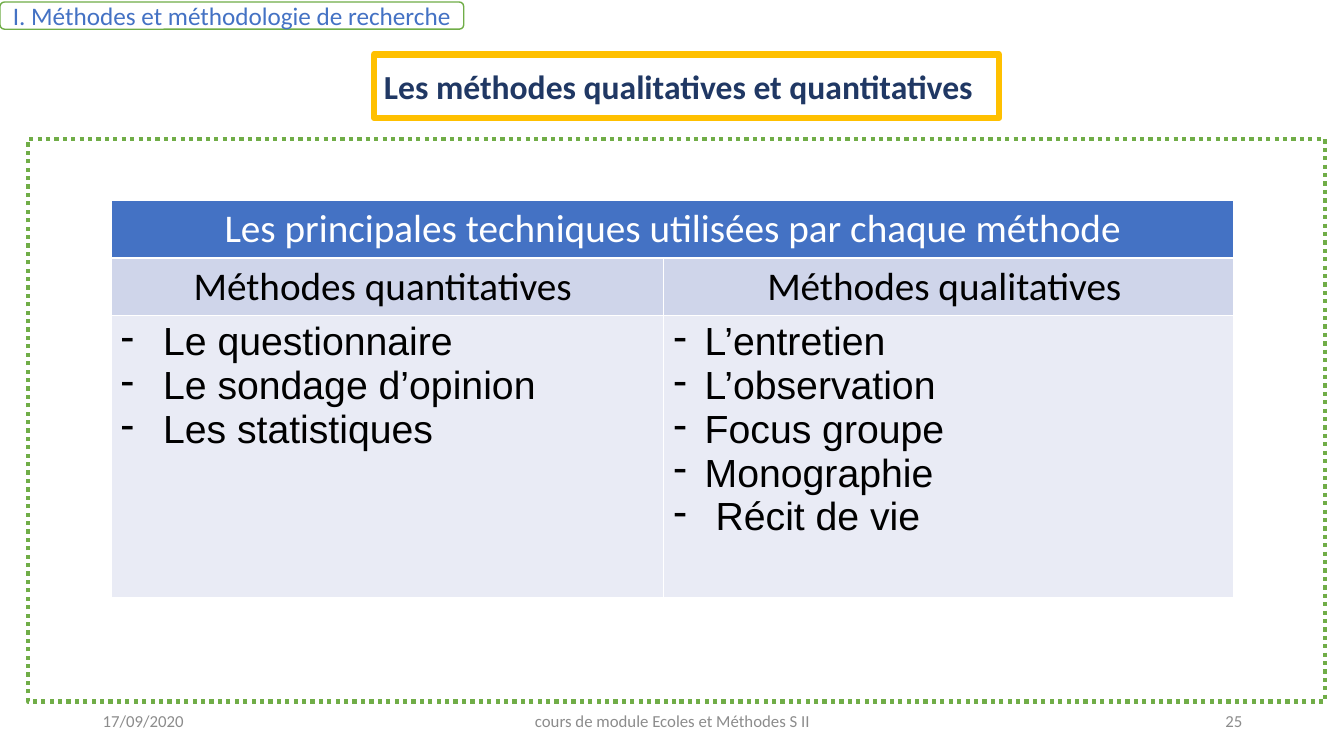
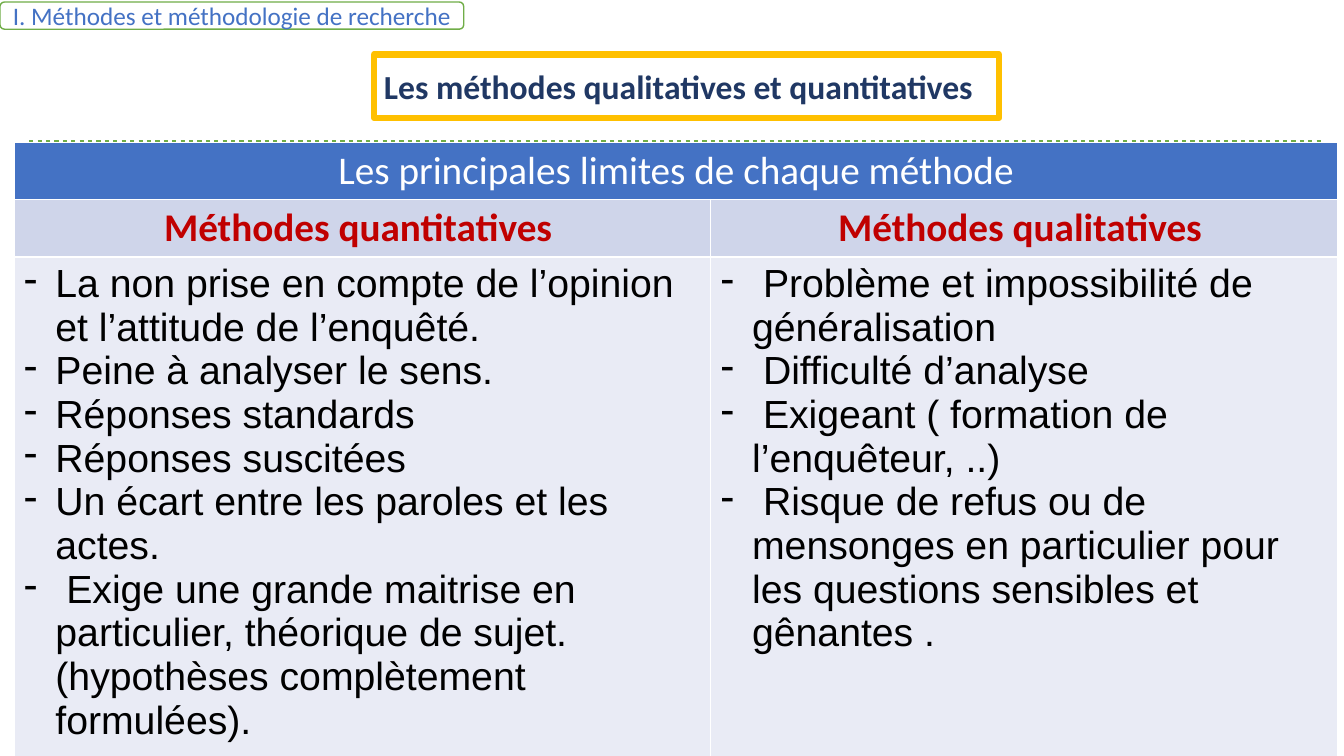
"""Build two slides comparing quantitative and qualitative research methods."""
import collections

import lxml.etree
import pptx
import pptx.dml.color
import pptx.enum.dml
import pptx.enum.shapes
import pptx.enum.text
import pptx.oxml.ns
import pptx.util

Theme = collections.namedtuple(
    "Theme",
    "white black blue navy red grey green gold band pale font body small tag title cell",
)
theme = Theme(
    white="FFFFFF", black="000000", blue="4472C4", navy="203864",
    red="C00000", grey="8C8C8C", green="70AD47", gold="FFC000",
    band="CFD5EA", pale="E9EBF5", font="Calibri", body="Arial",
    small=12, tag=18, title=24, cell=28,
)
rgb = pptx.dml.color.RGBColor.from_string
shapes = pptx.enum.shapes.MSO_SHAPE
align = pptx.enum.text.PP_ALIGN
middle = pptx.enum.text.MSO_ANCHOR.MIDDLE
qn = pptx.oxml.ns.qn
PX = 9144


def write(frame, lines, size, color, side=align.LEFT, bold=False, font=theme.font):
    frame.text = "\n".join(lines)
    frame.word_wrap = True
    for para in frame.paragraphs:
        para.alignment = side
        for run in para.runs:
            run.font.name = font
            run.font.size = pptx.util.Pt(size)
            run.font.bold = bold
            run.font.color.rgb = rgb(color)


def panel(slide, kind, box, color, width):
    shape = slide.shapes.add_shape(kind, *[n * PX for n in box])
    shape.shadow.inherit = False
    shape.fill.solid()
    shape.fill.fore_color.rgb = rgb(theme.white)
    shape.line.color.rgb = rgb(color)
    shape.line.width = pptx.util.Pt(width)
    shape.text_frame.vertical_anchor = middle
    return shape


heads = ["Méthodes quantitatives ", "Méthodes qualitatives "]
foot = [
    (92, 300, "17/09/2020", align.LEFT),
    (442, 450, "cours de module Ecoles et Méthodes S II", align.CENTER),
    (942, 300, "25", align.RIGHT),
]
pages = [
    {
        "foot": foot,
        "top": 138,
        "at": (110, 199),
        "cols": (548, 566),
        "rows": (57, 57, 280),
        "head": "Les principales techniques utilisées par chaque méthode",
        "color": theme.black,
        "bold": False,
        "lists": [
            [" Le questionnaire", " Le sondage d’opinion", " Les statistiques"],
            ["L’entretien", "L’observation", "Focus groupe", "Monographie",
             " Récit de vie"],
        ],
    },
    {
        "foot": [],
        "top": 141,
        "at": (14, 141),
        "cols": (691, 622),
        "rows": (57, 57, 496),
        "head": "Les principales limites de chaque méthode",
        "color": theme.red,
        "bold": True,
        "lists": [
            ["La non prise en compte de l’opinion et l’attitude de l’enquêté.",
             "Peine à analyser le sens.",
             "Réponses standards",
             "Réponses suscitées",
             "Un écart entre les paroles et les actes.",
             " Exige une grande maitrise en particulier, théorique de sujet. "
             "(hypothèses complètement formulées)."],
            [" Problème et impossibilité de généralisation",
             " Difficulté d’analyse",
             " Exigeant ( formation de l’enquêteur, ..)",
             " Risque de refus ou de mensonges en particulier pour les questions "
             "sensibles et gênantes ."],
        ],
    },
]

deck = pptx.Presentation()
deck.slide_width = 1333 * PX
deck.slide_height = 750 * PX

for page in pages:
    slide = deck.slides.add_slide(deck.slide_layouts[6])

    for left, width, text, side in page["foot"]:
        note = slide.shapes.add_textbox(left * PX, 695 * PX, width * PX, 40 * PX)
        note.text_frame.vertical_anchor = middle
        write(note.text_frame, [text], theme.small, theme.grey, side)

    tag = panel(slide, shapes.ROUNDED_RECTANGLE, (0, 2, 460, 27), theme.green, 1)
    write(tag.text_frame, ["I. Méthodes et méthodologie de recherche"],
          theme.tag, theme.blue, align.CENTER)

    border = panel(slide, shapes.RECTANGLE, (28, page["top"], 1286, 558), theme.green, 3)
    border.line.dash_style = pptx.enum.dml.MSO_LINE.ROUND_DOT

    title = panel(slide, shapes.RECTANGLE, (371, 54, 620, 63), theme.gold, 4.5)
    write(title.text_frame, ["Les méthodes qualitatives et quantitatives"],
          theme.title, theme.navy, bold=True)

    left, top = page["at"]
    grid = slide.shapes.add_table(
        3, 2, left * PX, top * PX, sum(page["cols"]) * PX, sum(page["rows"]) * PX
    ).table
    for col, width in zip(grid.columns, page["cols"]):
        col.width = width * PX
    for row, height in zip(grid.rows, page["rows"]):
        row.height = height * PX
    grid.cell(0, 0).merge(grid.cell(0, 1))

    for row, fill in zip(grid.rows, (theme.blue, theme.band, theme.pale)):
        for cell in row.cells:
            props = cell._tc.get_or_add_tcPr()
            for edge in ("lnL", "lnR", "lnT", "lnB"):
                line = lxml.etree.SubElement(props, qn("a:" + edge), w="12700")
                solid = lxml.etree.SubElement(line, qn("a:solidFill"))
                lxml.etree.SubElement(solid, qn("a:srgbClr"), val=theme.white)
            cell.fill.solid()
            cell.fill.fore_color.rgb = rgb(fill)

    write(grid.cell(0, 0).text_frame, [page["head"]], theme.cell, theme.white, align.CENTER)
    for spot, (head, items) in enumerate(zip(heads, page["lists"])):
        cell = grid.cell(1, spot)
        write(cell.text_frame, [head], theme.cell, page["color"], align.CENTER, page["bold"])
        cell.vertical_anchor = middle
        body = grid.cell(2, spot).text_frame
        write(body, items, theme.cell, theme.black, font=theme.body)
        for para in body.paragraphs:
            props = para._p.get_or_add_pPr()
            props.set("marL", str(31 * PX))
            props.set("indent", str(-31 * PX))
            lxml.etree.SubElement(props, qn("a:buChar"), char="-")

deck.save("out.pptx")
